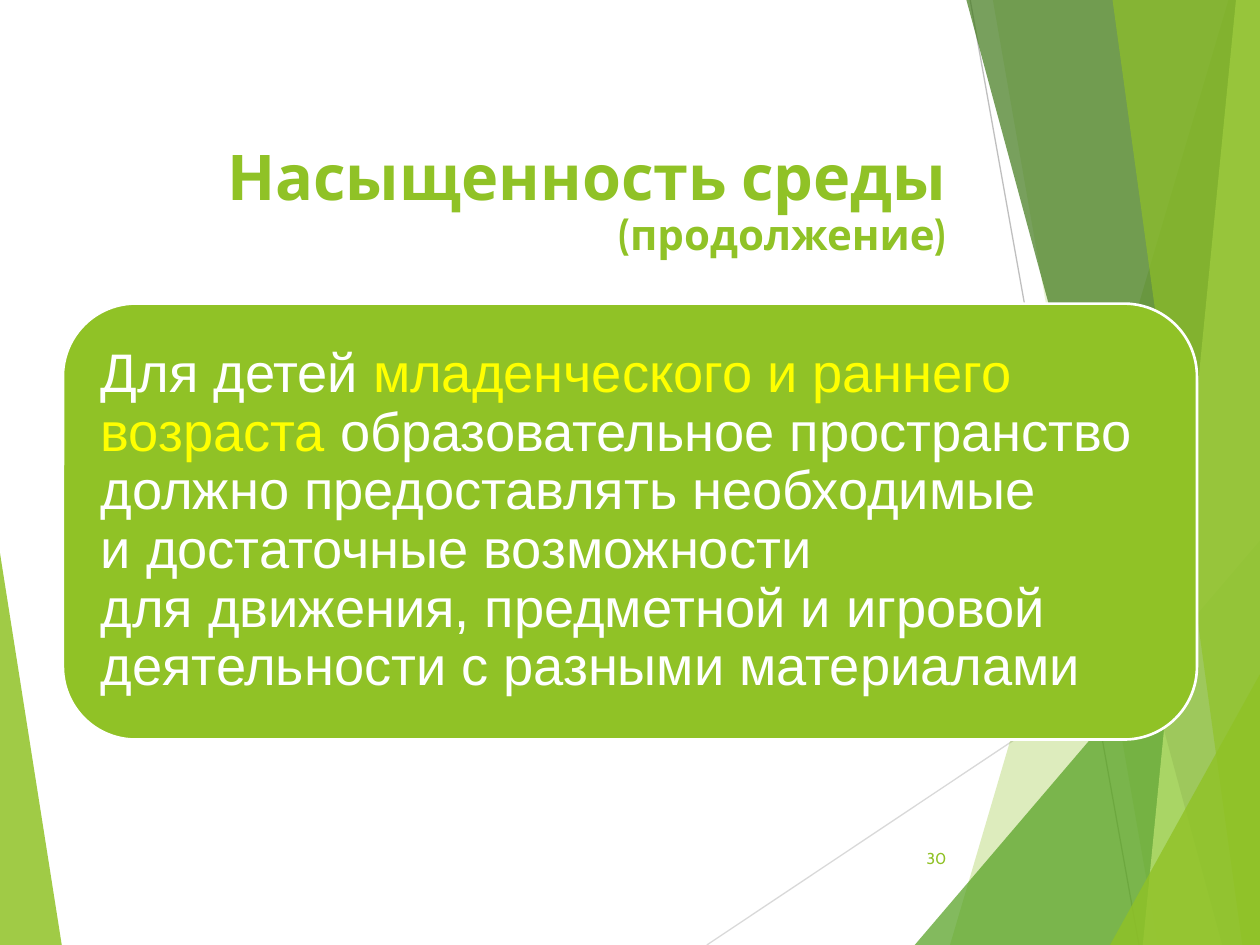
from dataclasses import dataclass

from lxml import etree
from pptx import Presentation
from pptx.dml.color import RGBColor
from pptx.enum.shapes import MSO_CONNECTOR, MSO_SHAPE
from pptx.enum.text import MSO_ANCHOR, PP_ALIGN
from pptx.oxml.ns import qn
from pptx.util import Emu, Inches, Pt

STRAIGHT = MSO_CONNECTOR.STRAIGHT
ROUNDED = MSO_SHAPE.ROUNDED_RECTANGLE
LEFT, RIGHT = PP_ALIGN.LEFT, PP_ALIGN.RIGHT
BOTTOM, MIDDLE = MSO_ANCHOR.BOTTOM, MSO_ANCHOR.MIDDLE
TITLE_ONLY = 5

# The slide is a grid of square cells; every position is counted in cells.
COLUMNS, ROWS = 10, 7.5
CELL = Inches(1)


@dataclass(frozen=True)
class Theme:
    green: str = "90C226"
    leaf: str = "54A021"
    forest: str = "3F7819"
    lime: str = "C0E474"
    yellow: str = "FFFF00"
    white: str = "FFFFFF"
    pale_gray: str = "D9D9D9"
    gray: str = "BFBFBF"
    heading_font: str = "Cabin"
    body_font: str = "Arial"
    title_size: float = 36
    subtitle_size: float = 24
    body_size: float = 31
    number_size: float = 9


@dataclass(frozen=True)
class Area:
    column: float
    row: float
    columns: float
    rows: float

    def inset(self, gap: float) -> "Area":
        return Area(self.column + gap, self.row + gap,
                    self.columns - 2 * gap, self.rows - 2 * gap)

    def lengths(self) -> tuple:
        return tuple(cells(value) for value in
                     (self.column, self.row, self.columns, self.rows))


@dataclass(frozen=True)
class Facet:
    points: tuple
    color: str
    opacity: int


@dataclass(frozen=True)
class Ray:
    start: tuple
    end: tuple
    color: str


THEME = Theme()


def right_band(top: float, bottom: float, color: str, opacity: int) -> Facet:
    """A full-height band from a slanted left edge to the slide's right edge."""
    return Facet(((top, 0), (bottom, ROWS), (COLUMNS, ROWS), (COLUMNS, 0)),
                 color, opacity)


def right_corner(left: float, top: float, color: str, opacity: int) -> Facet:
    """A triangle in the lower right corner."""
    return Facet(((left, ROWS), (COLUMNS, top), (COLUMNS, ROWS)), color, opacity)


LEFT_FACET = Facet(((0, 4.39), (0.49, ROWS), (0, ROWS)), THEME.green, 85)
RAYS = (
    Ray((5.61, ROWS), (COLUMNS, 4.57), THEME.pale_gray),
    Ray((7.7, 0), (9.04, ROWS), THEME.gray),
)
RIGHT_FACETS = (
    right_band(9.75, 7.54, THEME.green, 30),
    right_band(7.88, 9.19, THEME.green, 20),
    right_corner(7.26, 4.29, THEME.leaf, 72),
    right_band(7.67, 9.7, THEME.forest, 70),
    right_band(9.81, 9.07, THEME.lime, 70),
    right_band(8.83, 9.86, THEME.green, 65),
    right_corner(8.81, 5.35, THEME.green, 80),
)

TITLE = Area(0.67, 0.67, 6.94, 1.44)
PANEL = Area(0.5, 2.41, 9, 3.46)
NUMBER = Area(7.05, 6.61, 0.56, 0.4)


def cells(count: float) -> Emu:
    return Emu(round(count * CELL))


def draw_facet(page, facet: Facet) -> None:
    first, *others = [(cells(x), cells(y)) for x, y in facet.points]
    builder = page.shapes.build_freeform(*first)
    builder.add_line_segments(others, close=True)
    shape = builder.convert_to_shape()
    shape.shadow.inherit = False
    shape.line.fill.background()
    shape.fill.solid()
    shape.fill.fore_color.rgb = RGBColor.from_string(facet.color)
    color = shape.fill._xPr.find(f"{qn('a:solidFill')}/{qn('a:srgbClr')}")
    etree.SubElement(color, qn("a:alpha"), val=str(facet.opacity * 1000))


def draw_ray(page, ray: Ray) -> None:
    line = page.shapes.add_connector(
        STRAIGHT, *(cells(value) for value in ray.start + ray.end))
    line.line.color.rgb = RGBColor.from_string(ray.color)
    line.line.width = Pt(0.75)
    etree.SubElement(line._element.spPr, qn("a:effectLst"))


def draw_panel(page, area: Area) -> None:
    panel = page.shapes.add_shape(ROUNDED, *area.lengths())
    panel.shadow.inherit = False
    panel.fill.solid()
    panel.fill.fore_color.rgb = RGBColor.from_string(THEME.green)
    panel.line.color.rgb = RGBColor.from_string(THEME.white)
    panel.line.width = Pt(1.5)


def set_frame(box, *, anchor, align, spacing: float = 1.0, margin=None):
    """Format the text frame of a box and return its paragraph."""
    frame = box.text_frame
    frame.word_wrap = True
    frame.vertical_anchor = anchor
    if margin is not None:
        frame.margin_left = frame.margin_right = cells(margin)
        frame.margin_top = frame.margin_bottom = cells(margin)
    para = frame.paragraphs[0]
    para.alignment = align
    para.line_spacing = spacing
    return para


def add_text(para, text: str, *, font: str, size: float, color: str,
             bold: bool = False) -> None:
    for index, line in enumerate(text.split("\n")):
        if index:
            para.add_line_break()
        if not line:
            continue
        span = para.add_run()
        span.text = line
        span.font.name = font
        span.font.size = Pt(size)
        span.font.bold = bold
        span.font.color.rgb = RGBColor.from_string(color)


def main() -> None:
    deck = Presentation()
    deck.slide_width, deck.slide_height = cells(COLUMNS), cells(ROWS)
    page = deck.slides.add_slide(deck.slide_layouts[TITLE_ONLY])

    draw_facet(page, LEFT_FACET)
    for ray in RAYS:
        draw_ray(page, ray)
    for facet in RIGHT_FACETS:
        draw_facet(page, facet)

    title = page.shapes.title
    title.left, title.top, title.width, title.height = TITLE.lengths()
    para = set_frame(title, anchor=BOTTOM, align=RIGHT, spacing=0.9)
    heading = {"font": THEME.heading_font, "color": THEME.green}
    add_text(para, "Насыщенность среды\n", size=THEME.title_size, bold=True, **heading)
    add_text(para, "(продолжение)", size=THEME.subtitle_size, bold=True, **heading)

    draw_panel(page, PANEL)
    body = page.shapes.add_textbox(*PANEL.inset(0.17).lengths())
    para = set_frame(body, anchor=MIDDLE, align=LEFT, spacing=0.9, margin=0.13)
    for text, color in (
        ("Для детей ", THEME.white),
        ("младенческого и раннего возраста", THEME.yellow),
        (" образовательное пространство должно предоставлять необходимые\n"
         "и достаточные возможности\n"
         "для движения, предметной и игровой деятельности с разными материалами",
         THEME.white),
    ):
        add_text(para, text, font=THEME.body_font, size=THEME.body_size, color=color)

    number = page.shapes.add_textbox(*NUMBER.lengths())
    para = set_frame(number, anchor=MIDDLE, align=RIGHT)
    add_text(para, "30", size=THEME.number_size, **heading)

    deck.save("out.pptx")


if __name__ == "__main__":
    main()
